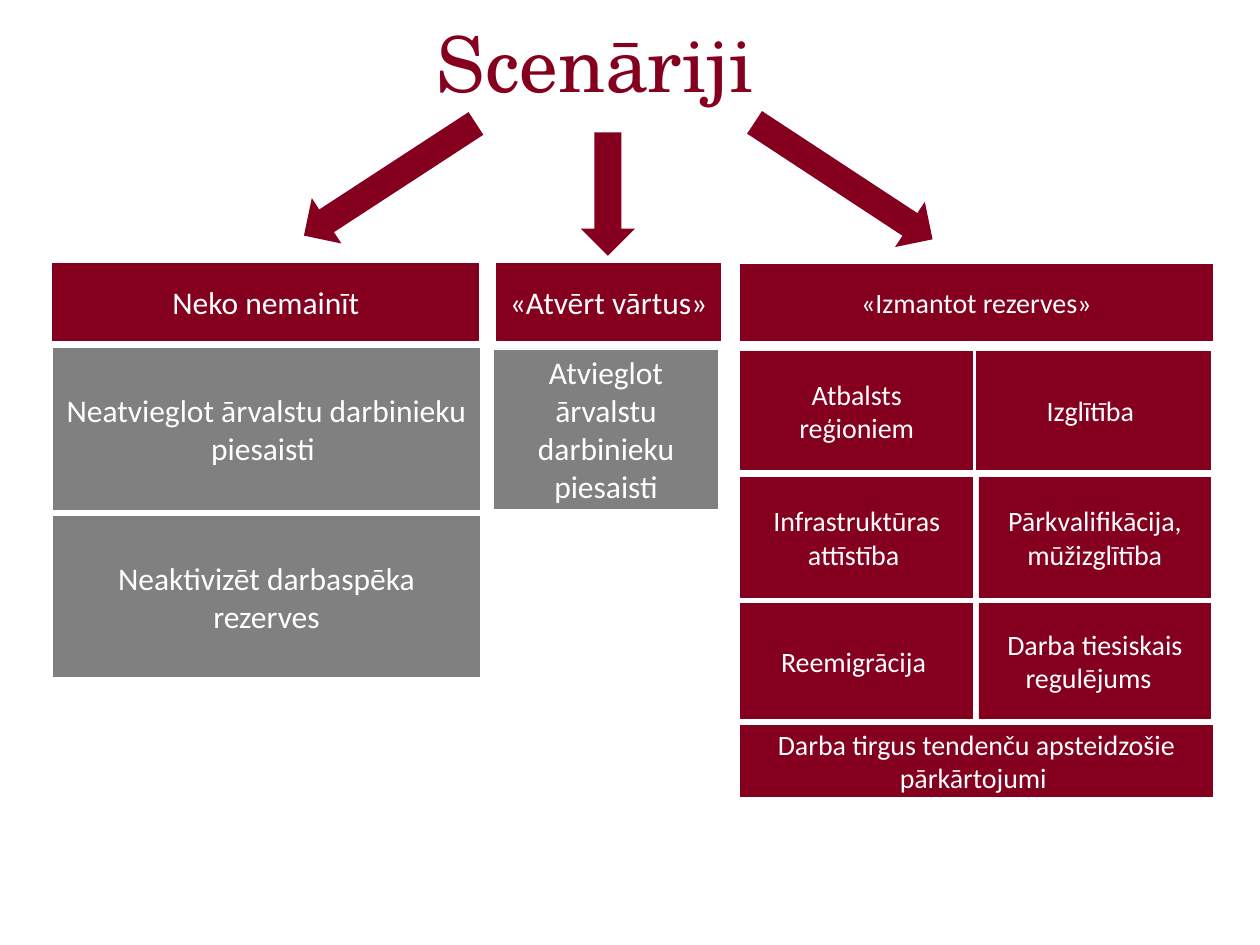
from pptx import Presentation
from pptx.dml.color import RGBColor
from pptx.enum.shapes import MSO_SHAPE as Shape
from pptx.enum.text import MSO_ANCHOR as Anchor, PP_ALIGN as Align
from pptx.util import Inches, Pt

WINE = RGBColor(0x84, 0x00, 0x1E)
GRAY = RGBColor(0x80, 0x80, 0x80)
WHITE = RGBColor(0xFF, 0xFF, 0xFF)
COLS, ROWS = 100, 75


class Page:
    """Draws on one slide; lengths are columns and rows of a 100 by 75 grid."""

    font = "Calibri"
    head = "TeX Gyre Schola"

    def __init__(self, deck):
        self.wide = deck.slide_width / COLS
        self.high = deck.slide_height / ROWS
        self.slide = deck.slides.add_slide(deck.slide_layouts[6])

    def place(self, left, top, width, height):
        return (round(left * self.wide), round(top * self.high),
                round(width * self.wide), round(height * self.high))

    def label(self, shape, lines, size, font, color, space=1.0):
        frame = shape.text_frame
        frame.word_wrap = True
        frame.vertical_anchor = Anchor.MIDDLE
        for i, line in enumerate(lines):
            para = frame.add_paragraph() if i else frame.paragraphs[0]
            para.alignment = Align.CENTER
            para.line_spacing = space
            run = para.add_run()
            run.text = line
            run.font.size = Pt(size)
            run.font.name = font
            run.font.color.rgb = color

    def title(self, text, *area):
        box = self.slide.shapes.add_textbox(*self.place(*area))
        self.label(box, [text], 44, self.head, WINE, 0.9)

    def solid(self, kind, fill, area):
        shape = self.slide.shapes.add_shape(kind, *self.place(*area))
        shape.shadow.inherit = False
        shape.fill.solid()
        shape.fill.fore_color.rgb = fill
        return shape

    def block(self, lines, *area, size=16, fill=WINE, edge=WINE):
        shape = self.solid(Shape.RECTANGLE, fill, area)
        shape.line.color.rgb = edge
        shape.line.width = Pt(0.5)
        self.label(shape, lines, size, self.font, WHITE)

    def arrow(self, turn, *area):
        shape = self.solid(Shape.DOWN_ARROW, WINE, area)
        shape.line.fill.background()
        shape.rotation = turn


def main():
    deck = Presentation()
    deck.slide_width, deck.slide_height = Inches(10), Inches(7.5)
    page = Page(deck)
    page.title("Scenāriji ", 3.1, -1.4, 90, 13.5)

    page.arrow(56.9, 28.8, 6.1, 4.3, 16.3)
    page.arrow(0, 46.1, 10.5, 4.3, 9.8)
    page.arrow(303.3, 64.8, 5.9, 4.3, 16.9)

    page.block(["Neko nemainīt"], 4.2, 20.9, 33.8, 6.1, size=18)
    page.block(["«Atvērt vārtus»"], 39.4, 20.9, 17.8, 6.1, size=18)
    page.block(["«Izmantot rezerves»"], 58.8, 21, 37.4, 6)

    plain = dict(size=18, fill=GRAY, edge=WHITE)
    still = ["Neatvieglot ārvalstu darbinieku piesaisti ",
             "Neaktivizēt darbaspēka rezerves"]
    for i, text in enumerate(still):
        page.block([text], 4.2, 27.6 + 13.3 * i, 33.9, 12.9, **plain)
    page.block(["Atvieglot", "ārvalstu darbinieku piesaisti"],
               39.2, 27.7, 17.8, 12.7, **plain)

    # Each row: height, left edge of the second block, the two texts
    means = [
        (9.4, 77.5, "Atbalsts reģioniem", "Izglītība "),
        (9.5, 77.7, "Infrastruktūras attīstība ",
         "Pārkvalifikācija, mūžizglītība"),
        (9.1, 77.7, "Reemigrācija ", "Darba tiesiskais regulējums  "),
    ]
    for i, (height, mid, first, second) in enumerate(means):
        top = 27.9 + 10 * i
        page.block([first], 58.8, top, 18.4, height)
        page.block([second], mid, top, 96.1 - mid, height)
    page.block(["Darba tirgus tendenču apsteidzošie pārkārtojumi "],
               58.8, 57.6, 37.4, 5.6)

    deck.save("out.pptx")


if __name__ == "__main__":
    main()
